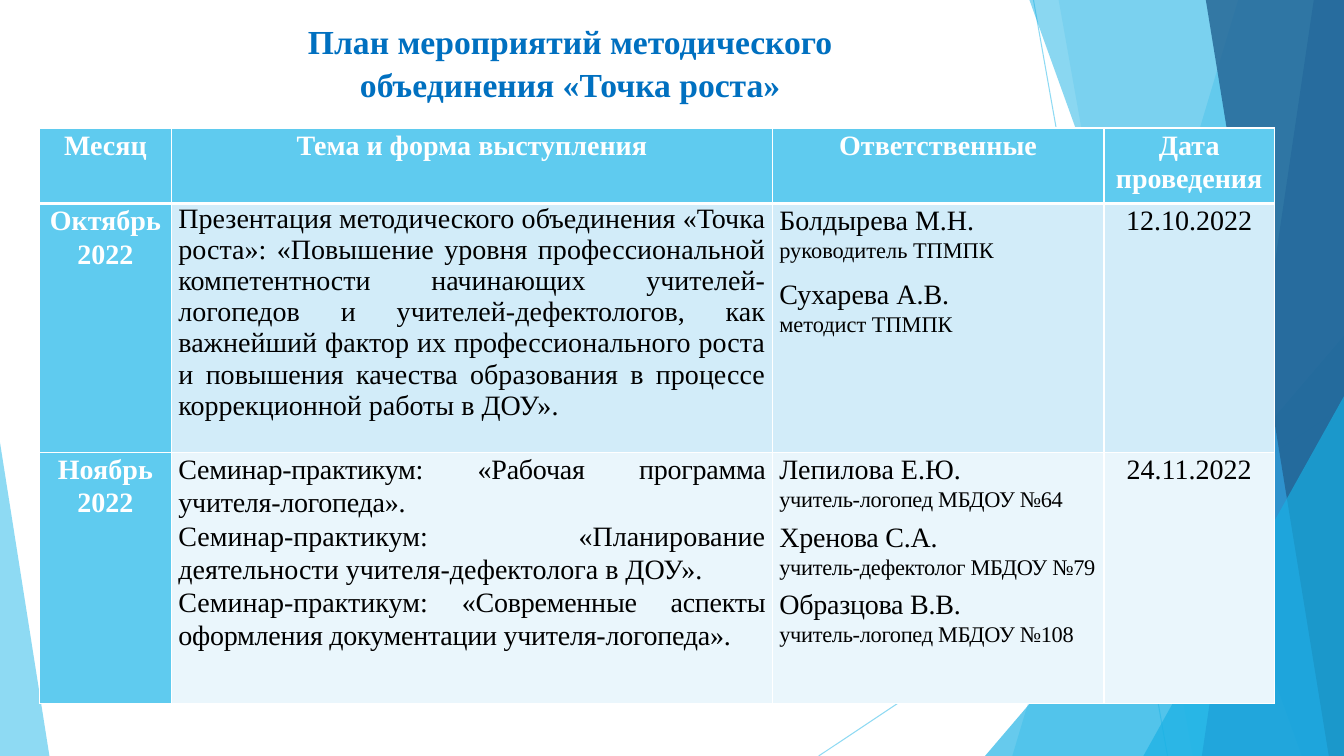
from lxml import etree
from pptx import Presentation
from pptx.dml.color import RGBColor
from pptx.enum.shapes import MSO_CONNECTOR, MSO_SHAPE
from pptx.enum.text import PP_ALIGN
from pptx.oxml.ns import qn
from pptx.util import Inches, Pt

LINE = MSO_CONNECTOR.STRAIGHT
TRIANGLE = MSO_SHAPE.ISOSCELES_TRIANGLE
LEFT, CENTER, JUSTIFY = PP_ALIGN.LEFT, PP_ALIGN.CENTER, PP_ALIGN.JUSTIFY

SKY = RGBColor(0x5F, 0xCB, 0xEF)
AZURE = RGBColor(0x17, 0xB0, 0xE4)
BLUE = RGBColor(0x2E, 0x83, 0xC3)
NAVY = RGBColor(0x22, 0x62, 0x92)
TITLE_BLUE = RGBColor(0x00, 0x70, 0xC0)
BAND_DARK = RGBColor(0xD2, 0xEC, 0xF9)
BAND_LIGHT = RGBColor(0xEA, 0xF6, 0xFC)
WHITE = RGBColor(0xFF, 0xFF, 0xFF)
BLACK = RGBColor(0x00, 0x00, 0x00)

FONT = "Times New Roman"
LINE_SPACING = 1.07
TIGHT = -20  # letter spacing, hundredths of a point
WIDTH, HEIGHT = 13.33, 7.5

COLUMNS = [1.31, 5.96, 3.29, 1.69]
ROWS = [0.75, 2.47, 2.49]
HEADINGS = ["Месяц", "Тема и форма выступления", "Ответственные", "Дата проведения"]

# Topics: paragraphs of (text, letter spacing) runs.
# People: (name, position, gap after in points).
MEETINGS = [
    {
        "month": "Октябрь 2022",
        "topics": [[(
            "Презентация методического объединения «Точка роста»: «Повышение уровня "
            "профессиональной компетентности начинающих учителей-логопедов и "
            "учителей-дефектологов, как важнейший фактор их профессионального роста "
            "и повышения качества образования в процессе коррекционной работы в ДОУ».", 0)]],
        "topic_spacing": 1.0,
        "people": [("Болдырева М.Н.", "руководитель ТПМПК", 10),
                   ("Сухарева А.В.", "методист ТПМПК", 0)],
        "people_tracking": 0,
        "date": "12.10.2022",
        "fill": BAND_DARK,
    },
    {
        "month": "Ноябрь 2022",
        "topics": [
            [("Семинар-практикум: «Рабочая программа учителя-логопеда».", TIGHT)],
            [("Семинар-практикум: «Планирование деятельности учителя-дефектолога в ДОУ».", 0)],
            [("Семинар-практикум:", 0),
             (" «Современные аспекты оформления документации учителя-логопеда»", TIGHT),
             (".", 0)],
        ],
        "topic_spacing": LINE_SPACING,
        "people": [("Лепилова Е.Ю.", "учитель-логопед МБДОУ №64", 6),
                   ("Хренова С.А.", "учитель-дефектолог МБДОУ №79", 5),
                   ("Образцова В.В.", "учитель-логопед МБДОУ №108", 0)],
        "people_tracking": TIGHT,
        "date": "24.11.2022",
        "fill": BAND_LIGHT,
    },
]


def set_alpha(color_parent, percent):
    color = color_parent.find(".//" + qn("a:srgbClr"))
    etree.SubElement(color, qn("a:alpha")).set("val", str(percent * 1000))


def paint(shape, color, opacity):
    shape.shadow.inherit = False
    shape.fill.solid()
    shape.fill.fore_color.rgb = color
    set_alpha(shape.fill._xPr.find(qn("a:solidFill")), opacity)
    shape.line.fill.background()


def add_ray(page, start, end):
    ray = page.shapes.add_connector(LINE, *map(Inches, start + end))
    ray.line.color.rgb = SKY
    ray.line.width = Pt(0.75)
    properties = ray._element.spPr
    set_alpha(properties.find(qn("a:ln")), 70)
    etree.SubElement(properties, qn("a:effectLst"))


def add_facet(page, top_x, bottom_x, color, opacity):
    """Fill the full-height area between a slanted edge and the right side."""
    builder = page.shapes.build_freeform(Inches(top_x), 0, 1.0)
    corners = [(WIDTH, 0), (WIDTH, HEIGHT), (bottom_x, HEIGHT)]
    builder.add_line_segments([(Inches(x), Inches(y)) for x, y in corners], close=True)
    paint(builder.convert_to_shape(), color, opacity)


def add_corner(page, left, top, width, apex, color, opacity):
    """Add a right triangle standing on the bottom of the slide."""
    corner = page.shapes.add_shape(
        TRIANGLE, Inches(left), Inches(top), Inches(width), Inches(HEIGHT - top))
    corner.adjustments[0] = apex
    paint(corner, color, opacity)


def add_backdrop(page):
    add_ray(page, (10.25, 0), (11.58, HEIGHT))
    add_ray(page, (WIDTH, 4.03), (8.12, HEIGHT))
    add_facet(page, 12.28, 10.04, SKY, 36)
    add_facet(page, 10.5, 11.83, SKY, 20)
    add_corner(page, 9.77, 3.33, 3.56, 1, AZURE, 66)
    add_facet(page, 10.21, 12.91, AZURE, 50)
    add_facet(page, 13.03, 11.92, BLUE, 70)
    add_facet(page, 11.96, 13.18, NAVY, 80)
    add_corner(page, 11.34, 3.93, 1.99, 1, AZURE, 66)
    add_corner(page, 0, 4.39, 0.49, 0, SKY, 70)


def write(para, spans, align, size=20, color=BLACK, bold=False,
          spacing=LINE_SPACING, gap=0):
    para.alignment = align
    para.line_spacing = spacing
    para.space_before = Pt(0)
    para.space_after = Pt(gap)
    for text, tracking in spans:
        span = para.add_run()
        span.text = text
        span.font.name = FONT
        span.font.size = Pt(size)
        span.font.bold = bold
        span.font.color.rgb = color
        if tracking:
            span._r.get_or_add_rPr().set("spc", str(tracking))


def add_title(page, left, top, width, height):
    box = page.shapes.add_textbox(*map(Inches, (left, top, width, height)))
    box.text_frame.word_wrap = True
    write(box.text_frame.paragraphs[0],
          [("План мероприятий методического объединения «Точка роста»", 0)],
          CENTER, size=24, color=TITLE_BLUE, bold=True, gap=8)


def format_cell(cell, fill, top=1, bottom=1):
    cell.margin_left = cell.margin_right = Inches(0.07)
    cell.margin_top = cell.margin_bottom = 0
    properties = cell._tc.get_or_add_tcPr()
    for side, width in (("L", 1), ("R", 1), ("T", top), ("B", bottom)):
        border = etree.SubElement(properties, qn("a:ln" + side), w=str(Pt(width)))
        solid = etree.SubElement(border, qn("a:solidFill"))
        etree.SubElement(solid, qn("a:srgbClr"), val=str(WHITE))
    cell.fill.solid()
    cell.fill.fore_color.rgb = fill


def fill_cell(cell, paragraphs):
    """Write a list of (spans, options) paragraphs."""
    frame = cell.text_frame
    for index, (spans, options) in enumerate(paragraphs):
        para = frame.add_paragraph() if index else frame.paragraphs[0]
        write(para, spans, **options)


def people_paragraphs(meeting):
    for index, (name, position, gap) in enumerate(meeting["people"]):
        tracking = meeting["people_tracking"]
        yield [(name, tracking if index else 0)], {"align": LEFT}
        yield [(position, tracking)], {"align": LEFT, "size": 16, "gap": gap}


def add_plan(page, left, top):
    frame = page.shapes.add_table(
        len(ROWS), len(COLUMNS), Inches(left), Inches(top),
        Inches(sum(COLUMNS)), Inches(sum(ROWS)))
    table = frame.table
    table.horz_banding = False
    for column, width in zip(table.columns, COLUMNS):
        column.width = Inches(width)
    for row, height in zip(table.rows, ROWS):
        row.height = Inches(height)

    label = {"align": CENTER, "color": WHITE, "bold": True}
    for column, heading in enumerate(HEADINGS):
        cell = table.cell(0, column)
        format_cell(cell, SKY, bottom=3)
        fill_cell(cell, [([(heading, 0)], label)])

    for row, meeting in enumerate(MEETINGS, start=1):
        topic = {"align": JUSTIFY, "spacing": meeting["topic_spacing"]}
        contents = [
            [([(meeting["month"], 0)], label)],
            [(spans, topic) for spans in meeting["topics"]],
            people_paragraphs(meeting),
            [([(meeting["date"], 0)], {"align": CENTER})],
        ]
        for column, paragraphs in enumerate(contents):
            cell = table.cell(row, column)
            format_cell(cell, meeting["fill"] if column else SKY, top=3 if row == 1 else 1)
            fill_cell(cell, paragraphs)


def main():
    deck = Presentation()
    deck.slide_width, deck.slide_height = Inches(WIDTH), Inches(HEIGHT)
    page = deck.slides.add_slide(deck.slide_layouts[6])
    add_backdrop(page)
    add_title(page, 2.32, 0.13, 6.67, 0.97)
    add_plan(page, 0.39, 1.27)
    deck.save("out.pptx")


if __name__ == "__main__":
    main()
